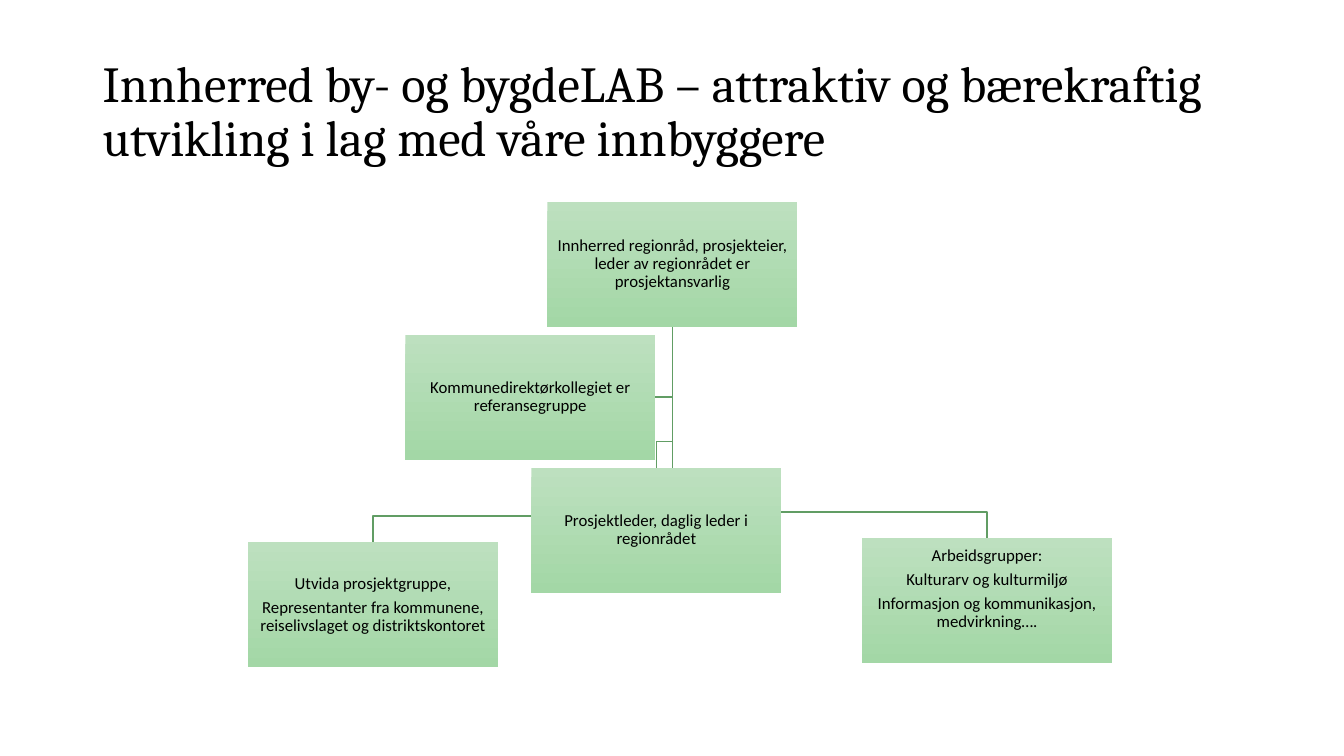
"""Build the Innherred project chart slide."""
from dataclasses import dataclass

import pptx
import pptx.dml.color
import pptx.enum.shapes
import pptx.enum.text
import pptx.util
from pptx.util import Inches

WIDTH, HEIGHT = 2.48, 1.24
DROP = 0.26
BLACK, LIGHT, DARK, EDGE = "000000", "BDE0BF", "A3D7A6", "619D64"


@dataclass
class Box:
    left: float
    top: float
    lines: list[str]
    foot: float = 0.01

    @property
    def mid(self) -> float:
        return self.left + WIDTH / 2


OWNER = Box(5.43, 2, ["Innherred regionråd, prosjekteier, leder av regionrådet er prosjektansvarlig"])
STAFF = Box(4.02, 3.32, ["Kommunedirektørkollegiet er referansegruppe"])
TEAMS = [
    Box(2.46, 5.38, ["Utvida prosjektgruppe,",
                     "Representanter fra kommunene, reiselivslaget og distriktskontoret"]),
    Box(5.27, 4.64, ["Prosjektleder, daglig leder i regionrådet"]),
    Box(8.55, 5.34, ["Arbeidsgrupper:", "Kulturarv og kulturmiljø",
                     "Informasjon og kommunikasjon, medvirkning…."], foot=0.25),
]


def color(code: str) -> pptx.dml.color.RGBColor:
    return pptx.dml.color.RGBColor.from_string(code)


def write(frame, lines: list[str], *, size: float, font: str, align, after: float = 0) -> None:
    frame.word_wrap = True
    frame.vertical_anchor = pptx.enum.text.MSO_ANCHOR.MIDDLE
    for i, line in enumerate(lines):
        para = frame.add_paragraph() if i else frame.paragraphs[0]
        para.alignment = align
        para.line_spacing = 0.9
        para.space_after = pptx.util.Pt(after)
        run = para.add_run()
        run.text = line
        run.font.size = pptx.util.Pt(size)
        run.font.name = font
        run.font.color.rgb = color(BLACK)


def link(slide, points: list[tuple[float, float]]) -> None:
    start, *rest = [(Inches(x), Inches(y)) for x, y in points]
    form = slide.shapes.build_freeform(*start)
    form.add_line_segments(rest, close=False)
    shape = form.convert_to_shape()
    shape.shadow.inherit = False
    shape.fill.background()
    shape.line.color.rgb = color(EDGE)
    shape.line.width = pptx.util.Pt(1)


def draw(slide, box: Box) -> None:
    shape = slide.shapes.add_shape(
        pptx.enum.shapes.MSO_SHAPE.RECTANGLE,
        Inches(box.left), Inches(box.top), Inches(WIDTH), Inches(HEIGHT))
    shape.shadow.inherit = False
    shape.line.fill.background()
    shape.fill.gradient()
    shape.fill.gradient_angle = 270
    for stop, code in zip(shape.fill.gradient_stops, (LIGHT, DARK)):
        stop.color.rgb = color(code)
    frame = shape.text_frame
    frame.margin_left = frame.margin_right = frame.margin_top = Inches(0.01)
    frame.margin_bottom = Inches(box.foot)
    write(frame, box.lines, size=12, font="Calibri",
          align=pptx.enum.text.PP_ALIGN.CENTER, after=4.2)


def main() -> None:
    deck = pptx.Presentation()
    deck.slide_width, deck.slide_height = Inches(13.33), Inches(7.5)
    slide = deck.slides.add_slide(deck.slide_layouts[6])

    title = slide.shapes.add_textbox(Inches(0.92), Inches(0.4), Inches(11.5), Inches(1.45))
    write(title.text_frame,
          ["Innherred by- og bygdeLAB – attraktiv og bærekraftig utvikling i lag med våre innbyggere"],
          size=36, font="Cambria", align=pptx.enum.text.PP_ALIGN.LEFT)

    trunk, base = OWNER.mid, OWNER.top + HEIGHT
    level = STAFF.top + HEIGHT / 2
    link(slide, [(trunk, base), (trunk, level), (STAFF.left + WIDTH, level)])
    for team in TEAMS:
        bend = team.top - DROP
        link(slide, [(trunk, base), (trunk, bend), (team.mid, bend), (team.mid, team.top)])
    for box in [OWNER, *TEAMS, STAFF]:
        draw(slide, box)

    deck.save("out.pptx")


if __name__ == "__main__":
    main()
